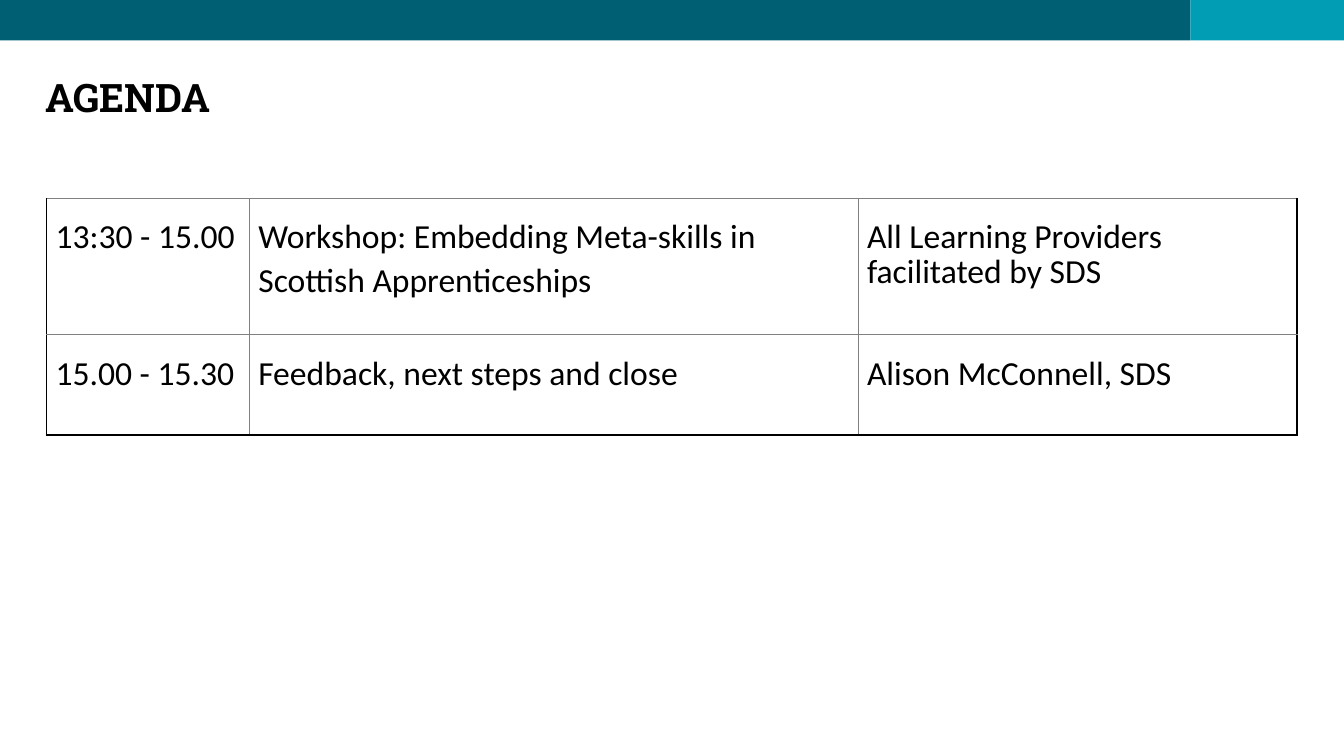
from lxml import etree
from pptx import Presentation
from pptx.dml.color import RGBColor
from pptx.enum import shapes
from pptx.oxml import ns
from pptx.util import Cm, Pt

TEAL = RGBColor(0x00, 0x5F, 0x72)
AQUA = RGBColor(0x00, 0x9D, 0xB5)
BLACK = RGBColor(0x00, 0x00, 0x00)
GREY = RGBColor(0x80, 0x80, 0x80)

COLS = (5.11, 15.34, 11.07)
ROWS = (3.43, 2.54)
AGENDA = (
    ("13:30 - 15.00",
     "Workshop: Embedding Meta-skills in\nScottish Apprenticeships",
     "All Learning Providers\nfacilitated by SDS"),
    ("15.00 - 15.30",
     "Feedback, next steps and close",
     "Alison McConnell, SDS"),
)


def add_bar(slide, left, top, width, height):
    """Draw the two-tone band across the given box."""
    split = 30
    parts = ((left, split, TEAL), (left + split, width - split, AQUA))
    for x, wide, color in parts:
        bar = slide.shapes.add_shape(
            shapes.MSO_SHAPE.RECTANGLE, Cm(x), Cm(top), Cm(wide), Cm(height))
        bar.shadow.inherit = False
        bar.fill.solid()
        bar.fill.fore_color.rgb = color
        bar.line.fill.background()


def add_title(slide, left, top, width, height):
    box = slide.shapes.add_textbox(Cm(left), Cm(top), Cm(width), Cm(height))
    box.text_frame.word_wrap = True
    line = box.text_frame.paragraphs[0]
    line.text = "AGENDA"
    font = line.font
    font.name, font.size, font.bold = "Roboto Slab", Pt(28), True
    font.color.rgb = BLACK


def set_edge(cell, side, color, width):
    props = cell._tc.get_or_add_tcPr()
    edge = etree.SubElement(props, ns.qn(f"a:ln{side}"), w=str(Pt(width)))
    fill = etree.SubElement(edge, ns.qn("a:solidFill"))
    etree.SubElement(fill, ns.qn("a:srgbClr"), val=str(color))


def fill_cell(cell, words, gap):
    """Write the lines of a cell, with the given space after each."""
    cell.margin_left, cell.margin_right = Cm(0.23), Cm(0.1)
    cell.margin_top, cell.margin_bottom = Cm(1.05), Cm(0.18)
    cell.text = words
    for i, line in enumerate(cell.text_frame.paragraphs):
        line.line_spacing = Pt(12.8)
        line.space_before = Pt(6 if i else 0)
        line.space_after = Pt(gap)
        line.font.name, line.font.size = "Calibri", Pt(24)
        line.font.color.rgb = BLACK


def add_agenda(slide, left, top):
    table = slide.shapes.add_table(
        len(ROWS), len(COLS), Cm(left), Cm(top),
        Cm(sum(COLS)), Cm(sum(ROWS))).table
    table.first_row = table.horz_banding = False
    for col, width in zip(table.columns, COLS):
        col.width = Cm(width)
    for row, height in zip(table.rows, ROWS):
        row.height = Cm(height)
    for r, items in enumerate(AGENDA):
        for c, words in enumerate(items):
            cell = table.cell(r, c)
            fill_cell(cell, words, 12 if c == 1 else 6)
            outer = {"L": c == 0, "R": c == len(COLS) - 1,
                     "T": False, "B": r == len(ROWS) - 1}
            for side, bold in outer.items():
                set_edge(cell, side, *((BLACK, 1.5) if bold else (GREY, 0.5)))
            cell.fill.background()


def main():
    deck = Presentation()
    deck.slide_width, deck.slide_height = Cm(33.87), Cm(19.05)
    slide = deck.slides.add_slide(deck.slide_layouts[6])
    add_bar(slide, 0, 0, 33.87, 1.02)
    add_title(slide, 0.91, 1.73, 12.6, 1.45)
    add_agenda(slide, 1.17, 5)
    deck.save("out.pptx")


if __name__ == "__main__":
    main()
